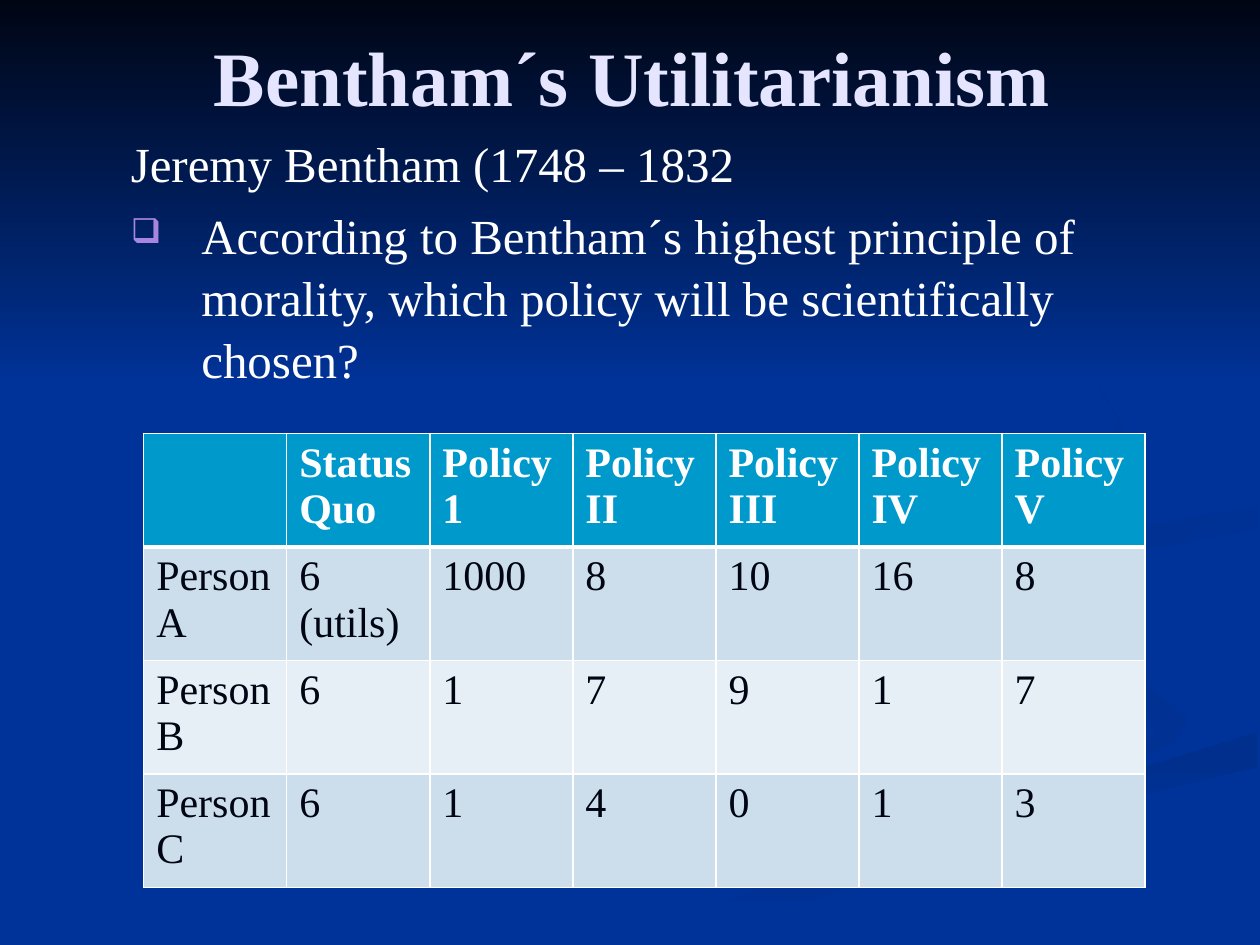
from dataclasses import dataclass

from lxml import etree
from pptx import Presentation
from pptx.dml.color import RGBColor
from pptx.enum.text import MSO_ANCHOR, PP_ALIGN
from pptx.oxml.ns import qn
from pptx.util import Inches, Pt

CENTER = PP_ALIGN.CENTER
LEFT = PP_ALIGN.LEFT
MIDDLE = MSO_ANCHOR.MIDDLE
TOP = MSO_ANCHOR.TOP

FONT = "Times New Roman"
BLUE = RGBColor(0x00, 0x33, 0x99)
NIGHT = RGBColor(0x00, 0x05, 0x14)
SHADE = RGBColor(0x00, 0x2F, 0x8E)
SOFT_SHADE = RGBColor(0x00, 0x31, 0x93)
LAVENDER = RGBColor(0xE5, 0xE5, 0xFF)
VIOLET = RGBColor(0xA8, 0x86, 0xE0)
WHITE = RGBColor(0xFF, 0xFF, 0xFF)
HEADER_FILL = RGBColor(0x00, 0x99, 0xCC)
BAND_FILLS = (RGBColor(0xE7, 0xEF, 0xF6), RGBColor(0xCC, 0xDE, 0xEC))


@dataclass
class Ribbon:
    """A background outline, shaded from start to end at a clockwise angle."""
    start: RGBColor
    end: RGBColor
    angle: int
    points: list[tuple[float, float]]


RIBBONS = [
    Ribbon(BLUE, SOFT_SHADE, 0, [
        (7.81, 5.56), (7.86, 5.66), (7.59, 5.9), (5.39, 6.49), (3, 7.49),
        (3.61, 7.49), (5.64, 6.65), (7.8, 6.05), (8, 5.81)]),
    Ribbon(BLUE, SOFT_SHADE, 45, [
        (9.43, 5.7), (9.05, 5.4), (7.58, 4.98), (7.24, 4.64), (7.46, 5),
        (8.68, 5.44), (9.07, 5.62), (9.18, 5.81), (8.94, 6.05), (9.32, 5.89)]),
    Ribbon(SHADE, BLUE, 90, [
        (5.03, 7.49), (5.71, 7.49), (6.95, 6.92), (8.21, 6.51), (9.98, 6.09),
        (9.98, 5.81), (9.03, 6.1), (6.96, 6.69), (5.69, 7.19)]),
    Ribbon(SHADE, BLUE, 45, [
        (7.81, 4.6), (8.26, 4.96), (8.05, 4.72), (8.43, 4.48), (9.98, 4.2),
        (9.98, 4.02), (8.35, 4.3)]),
    Ribbon(SHADE, BLUE, 45, [
        (6.83, 4.3), (8.25, 4.02), (8.76, 3.78), (8.94, 3.44), (8.64, 2.91),
        (7.62, 2.33), (8.62, 2.92), (8.89, 3.35), (8.61, 3.7), (7.63, 3.98),
        (6.15, 4.29), (5.77, 4.62), (6.22, 5), (5.93, 4.7), (6.24, 4.44)]),
    Ribbon(NIGHT, BLUE, 90, [(0, 0), (0, 3.08), (10, 3.08), (10, 0)]),
]

TABLE_ROWS = [
    ("", "Status Quo", "Policy 1", "Policy II", "Policy III", "Policy IV", "Policy V"),
    ("Person A", "6 (utils)", "1000", "8", "10", "16", "8"),
    ("Person B", "6", "1", "7", "9", "1", "7"),
    ("Person C", "6", "1", "4", "0", "1", "3"),
]


def draw_ribbon(slide, ribbon: Ribbon) -> None:
    first, *rest = [(Inches(x), Inches(y)) for x, y in ribbon.points]
    builder = slide.shapes.build_freeform(*first)
    builder.add_line_segments(rest, close=True)
    sp = builder.convert_to_shape()
    sp.shadow.inherit = False
    sp.line.fill.background()
    sp.fill.gradient()
    sp.fill.gradient_angle = (360 - ribbon.angle) % 360
    for stop, color in zip(sp.fill.gradient_stops, (ribbon.start, ribbon.end)):
        stop.color.rgb = color


def format_paragraph(p, size: int, color: RGBColor, bold: bool = False) -> None:
    for r in p.runs:
        r.font.name, r.font.size, r.font.bold = FONT, Pt(size), bold
        r.font.color.rgb = color


def add_text_frame(slide, box: tuple[float, ...], text: str, anchor: MSO_ANCHOR):
    tf = slide.shapes.add_textbox(*map(Inches, box)).text_frame
    tf.word_wrap = True
    tf.vertical_anchor = anchor
    tf.text = text
    return tf


def indent(p, left: float, first: float) -> None:
    pPr = p._p.get_or_add_pPr()
    pPr.set("marL", str(Inches(left)))
    pPr.set("indent", str(Inches(first)))


def add_bullet(p, char: str, color: RGBColor, percent: int) -> None:
    pPr = p._p.get_or_add_pPr()
    bullet_color = etree.SubElement(pPr, qn("a:buClr"))
    etree.SubElement(bullet_color, qn("a:srgbClr"), val=str(color))
    etree.SubElement(pPr, qn("a:buSzPct"), val=str(percent * 1000))
    etree.SubElement(pPr, qn("a:buChar"), char=char)


def set_borders(cell, top: int, bottom: int) -> None:
    """Draw white cell borders, with top and bottom widths in points."""
    tcPr = cell._tc.get_or_add_tcPr()
    for side, width in (("L", 1), ("R", 1), ("T", top), ("B", bottom)):
        ln = etree.SubElement(tcPr, qn(f"a:ln{side}"), w=str(Pt(width)))
        fill = etree.SubElement(ln, qn("a:solidFill"))
        etree.SubElement(fill, qn("a:srgbClr"), val=str(WHITE))


def add_policy_table(slide) -> None:
    table = slide.shapes.add_table(len(TABLE_ROWS), len(TABLE_ROWS[0]), Inches(1.14),
                                   Inches(3.44), Inches(7.95), Inches(3.46)).table
    for i, values in enumerate(TABLE_ROWS):
        header = i == 0
        for cell, value in zip(table.rows[i].cells, values):
            cell.text = value
            set_borders(cell, top=3 if i == 1 else 1, bottom=3 if header else 1)
            cell.fill.solid()
            cell.fill.fore_color.rgb = HEADER_FILL if header else BAND_FILLS[i % 2]
            format_paragraph(cell.text_frame.paragraphs[0], 24,
                             WHITE if header else NIGHT, header)


def main() -> None:
    prs = Presentation()
    prs.slide_width, prs.slide_height = Inches(10), Inches(7.5)
    slide = prs.slides.add_slide(prs.slide_layouts[6])
    slide.background.fill.solid()
    slide.background.fill.fore_color.rgb = BLUE
    for ribbon in RIBBONS:
        draw_ribbon(slide, ribbon)

    title = add_text_frame(slide, (0.04, 0.13, 9.96, 0.94), "Bentham´s Utilitarianism", MIDDLE)
    title.paragraphs[0].alignment = CENTER
    format_paragraph(title.paragraphs[0], 44, LAVENDER, bold=True)

    body = add_text_frame(
        slide, (0.51, 0.99, 9, 6.32),
        "Jeremy Bentham (1748 – 1832\nAccording to Bentham´s highest principle of "
        "morality, which policy will be scientifically chosen?", TOP)
    for p in body.paragraphs:
        p.alignment = LEFT
        p.line_spacing = 1.05
        p.space_before = Pt(5.6)
        format_paragraph(p, 28, WHITE)
    name, question = body.paragraphs
    indent(name, 0.43, 0)
    indent(question, 0.99, -0.56)
    add_bullet(question, "❑", VIOLET, 70)

    add_policy_table(slide)
    prs.save("out.pptx")


if __name__ == "__main__":
    main()
